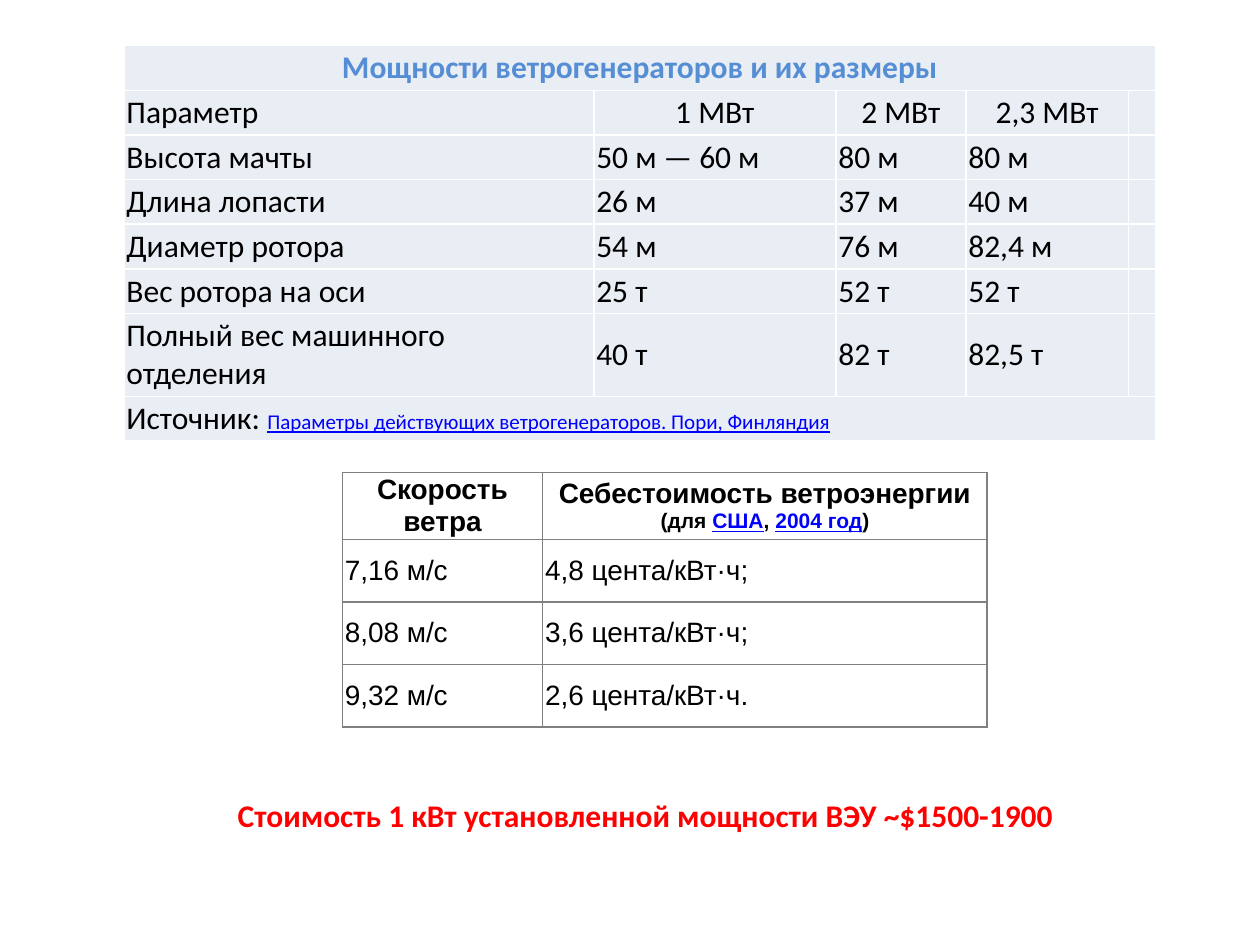
from lxml.etree import SubElement
from pptx import Presentation
from pptx.dml.color import RGBColor
from pptx.enum.text import MSO_ANCHOR as Anchor, PP_ALIGN as Align
from pptx.oxml.ns import qn
from pptx.util import Cm, Pt

BLACK, BLUE, RED, LINK = "000000", "558ED5", "FF0000", "0000FF"
WHITE, GREY, PALE = "FFFFFF", "808080", "E9EDF4"

TURBINES = [
    ["Параметр", "1 МВт", "2 МВт", "2,3 МВт"],
    ["Высота мачты", "50 м — 60 м", "80 м", "80 м"],
    ["Длина лопасти", "26 м", "37 м", "40 м"],
    ["Диаметр ротора", "54 м", "76 м", "82,4 м"],
    ["Вес ротора на оси", "25 т", "52 т", "52 т"],
    ["Полный вес машинного отделения", "40 т", "82 т", "82,5 т"],
]
COSTS = [
    ["7,16 м/c", "4,8 цента/кВт·ч;"],
    ["8,08 м/с", "3,6 цента/кВт·ч;"],
    ["9,32 м/с", "2,6 цента/кВт·ч."],
]


def color(value):
    """Turn a hex string into a colour."""
    return RGBColor.from_string(value)


def add_text(paragraph, text, size=18, font="Calibri", fill=BLACK, bold=False,
             underline=False, align=Align.LEFT):
    """Append a formatted run to a paragraph."""
    paragraph.alignment = align
    run = paragraph.add_run()
    run.text = text
    run.font.size = Pt(size)
    run.font.name = font
    run.font.bold = bold
    run.font.underline = underline
    run.font.color.rgb = color(fill)


def add_border(cell, line_color):
    """Draw a one-point line on each side of a cell."""
    properties = cell._tc.get_or_add_tcPr()
    for side in ("a:lnL", "a:lnR", "a:lnT", "a:lnB"):
        line = SubElement(properties, qn(side), w=str(Pt(1)))
        solid = SubElement(line, qn("a:solidFill"))
        SubElement(solid, qn("a:srgbClr"), val=line_color)


def add_table(slide, left, top, widths, heights, line_color, fill=None):
    """Add a plain table with bordered cells and narrow margins."""
    shape = slide.shapes.add_table(len(heights), len(widths), Cm(left), Cm(top),
                                   Cm(sum(widths)), Cm(sum(heights)))
    table = shape.table
    table.first_row = table.horz_banding = False
    for column, width in zip(table.columns, widths):
        column.width = Cm(width)
    for row, height in zip(table.rows, heights):
        row.height = Cm(height)
    for cell in table.iter_cells():
        cell.margin_left = cell.margin_right = Cm(0.05)
        cell.margin_top = cell.margin_bottom = Cm(0.05)
        cell.vertical_anchor = Anchor.MIDDLE
        add_border(cell, line_color)
        if fill:
            cell.fill.solid()
            cell.fill.fore_color.rgb = color(fill)
        else:
            cell.fill.background()
    return table


def first_paragraph(table, row, column):
    """Return the first paragraph of a cell."""
    return table.cell(row, column).text_frame.paragraphs[0]


def fill_rows(table, rows, **text_format):
    """Write rows of text below the heading row."""
    for row_index, row in enumerate(rows, 1):
        for column_index, text in enumerate(row):
            add_text(first_paragraph(table, row_index, column_index), text, **text_format)


def add_turbine_table(slide):
    """Add the table of turbine powers and sizes."""
    heights = [0.9] * 6 + [1.67, 0.9]
    table = add_table(slide, 2.5, 0.92, [9.47, 4.88, 2.62, 3.28, 0.55], heights, WHITE, PALE)
    last = len(heights) - 1
    for row in (0, last):
        table.cell(row, 0).merge(table.cell(row, 4))
    add_text(first_paragraph(table, 0, 0), "Мощности ветрогенераторов и их размеры",
             fill=BLUE, bold=True, align=Align.CENTER)
    fill_rows(table, TURBINES)
    for column in range(1, 4):
        first_paragraph(table, 1, column).alignment = Align.CENTER
    source = first_paragraph(table, last, 0)
    add_text(source, "Источник: ")
    add_text(source, "Параметры действующих ветрогенераторов. Пори, Финляндия",
             size=12, fill=LINK, underline=True)


def add_cost_table(slide):
    """Add the table of energy cost by wind speed."""
    table = add_table(slide, 6.9, 9.52, [4.04, 8.96], [1.35] + [1.26] * 3, GREY)
    heading = {"font": "Arial", "bold": True, "align": Align.CENTER}
    link = {"fill": LINK, "underline": True}
    add_text(first_paragraph(table, 0, 0), "Скорость ветра", size=16, **heading)
    cost = first_paragraph(table, 0, 1)
    add_text(cost, "Себестоимость ветроэнергии ", size=16, **heading)
    for text, style in (("(для ", {}), ("США", link), (", ", {}), ("2004 год", link), (")", {})):
        add_text(cost, text, size=12, **heading, **style)
    fill_rows(table, COSTS, size=16, font="Arial")


def add_price_line(slide):
    """Add the line with the price of installed power."""
    box = slide.shapes.add_textbox(Cm(2.31), Cm(15.93), Cm(21.41), Cm(1.02))
    box.text_frame.word_wrap = True
    add_text(box.text_frame.paragraphs[0],
             "Стоимость 1 кВт установленной мощности ВЭУ ~$1500-1900",
             fill=RED, bold=True, align=Align.CENTER)


def main():
    """Build the slide and save it."""
    presentation = Presentation()
    presentation.slide_width, presentation.slide_height = Cm(25.4), Cm(19.05)
    slide = presentation.slides.add_slide(presentation.slide_layouts[6])
    add_turbine_table(slide)
    add_cost_table(slide)
    add_price_line(slide)
    presentation.save("out.pptx")


if __name__ == "__main__":
    main()
